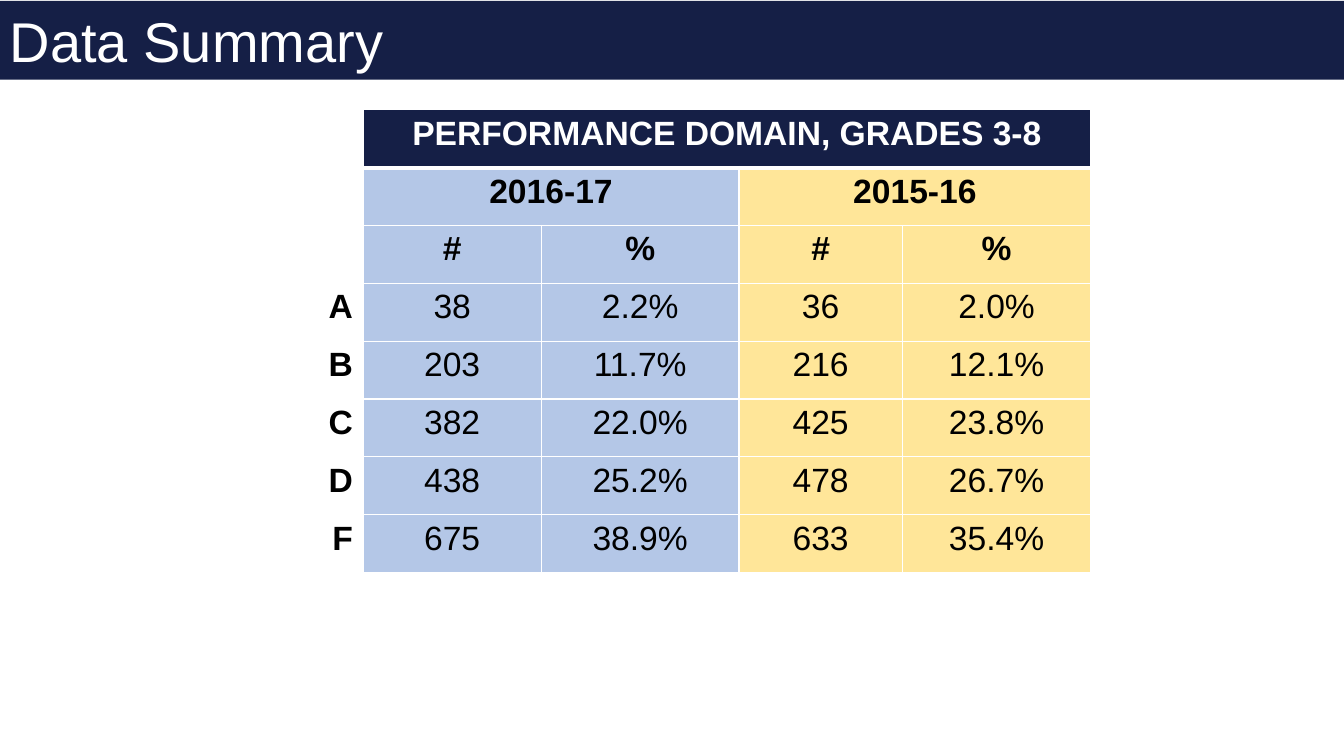
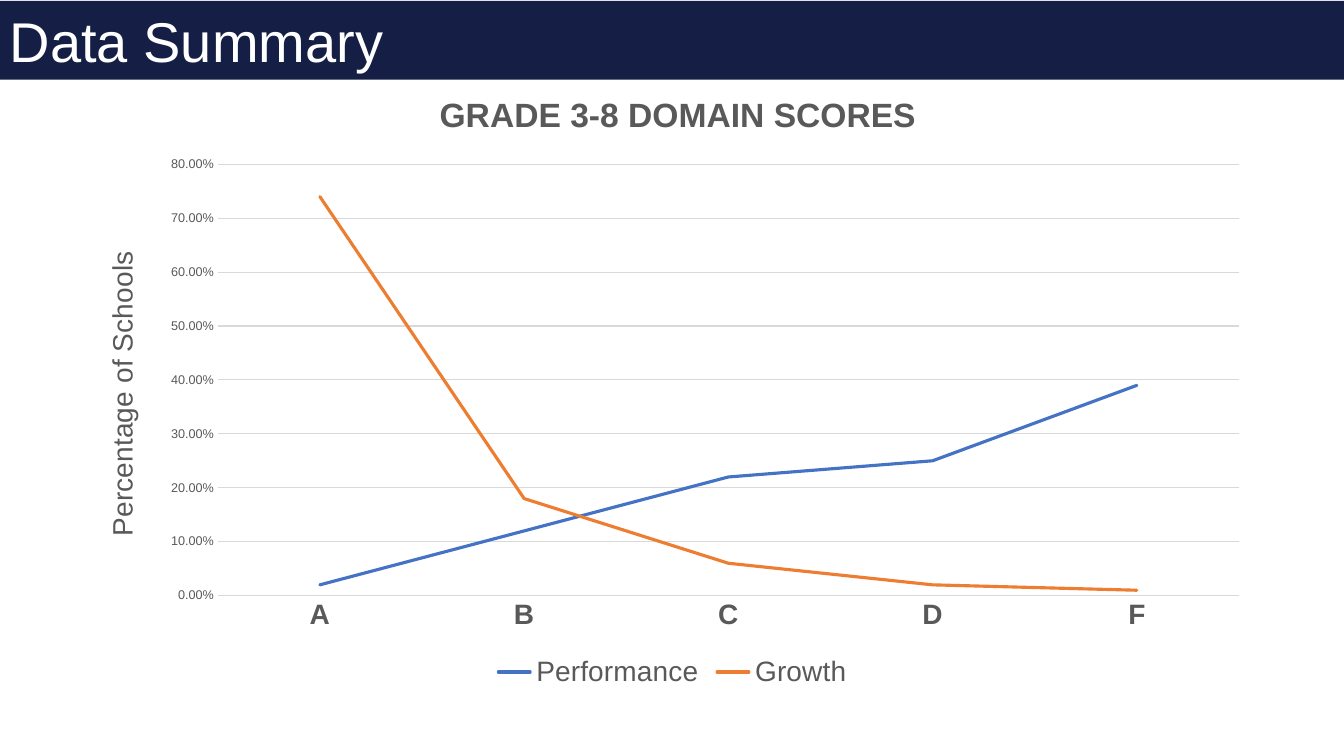
from dataclasses import dataclass

from lxml import etree
from pptx import Presentation
from pptx.chart.data import CategoryChartData
from pptx.dml.color import RGBColor
from pptx.enum.chart import XL_CHART_TYPE, XL_LEGEND_POSITION, XL_TICK_MARK
from pptx.enum.shapes import MSO_SHAPE
from pptx.enum.text import MSO_ANCHOR, PP_ALIGN
from pptx.oxml.ns import qn
from pptx.util import Inches, Pt

LINE = XL_CHART_TYPE.LINE
BOTTOM = XL_LEGEND_POSITION.BOTTOM
NO_TICK = XL_TICK_MARK.NONE
RECT = MSO_SHAPE.RECTANGLE
MIDDLE = MSO_ANCHOR.MIDDLE
LEFT, CENTER, RIGHT = PP_ALIGN.LEFT, PP_ALIGN.CENTER, PP_ALIGN.RIGHT

FONT = "Arial"
NAVY, WHITE, BLACK = "151F46", "FFFFFF", "000000"
PALE_BLUE, PALE_GOLD = "B4C7E7", "FFE699"
GRAY, GRID = "595959", "D9D9D9"
SLIDE_WIDTH = 13.33
CHART_LEFT, CHART_TOP, CHART_WIDTH, CHART_HEIGHT = 0.81, 0.79, 11.72, 6.09


@dataclass(frozen=True)
class Grade:
    letter: str
    count_17: int
    percent_17: float
    count_16: int
    percent_16: float
    growth: float


@dataclass(frozen=True)
class Series:
    name: str
    color: str
    values: list[float]


GRADES = [
    Grade("A", 38, 2.2, 36, 2.0, 0.74),
    Grade("B", 203, 11.7, 216, 12.1, 0.18),
    Grade("C", 382, 22.0, 425, 23.8, 0.06),
    Grade("D", 438, 25.2, 478, 26.7, 0.02),
    Grade("F", 675, 38.9, 633, 35.4, 0.01),
]
SERIES = [
    Series("Performance", "4472C4", [round(g.percent_17 / 100, 2) for g in GRADES]),
    Series("Growth", "ED7D31", [g.growth for g in GRADES]),
]


def rgb(color: str) -> RGBColor:
    return RGBColor.from_string(color)


def style_font(font, size: float, color: str, bold: bool = False) -> None:
    font.name = FONT
    font.size = Pt(size)
    font.bold = bold
    font.color.rgb = rgb(color)


def set_text(tf, text: str, size: float, color: str, align=CENTER, bold: bool = False) -> None:
    tf.text = text
    p = tf.paragraphs[0]
    p.alignment = align
    style_font(p.runs[0].font, size, color, bold)


def set_border(cell, side: str, color: str, width: float) -> None:
    """Put a cell border ahead of the cell's fill."""
    ln = etree.Element(qn(f"a:{side}"), w=str(Pt(width)))
    fill = etree.SubElement(ln, qn("a:solidFill"))
    etree.SubElement(fill, qn("a:srgbClr"), val=color)
    cell._tc.get_or_add_tcPr().insert(0, ln)


def place_in_chart(element, index: int, **inches: float) -> None:
    """Place a chart part at slide positions given in inches."""
    for old in element.findall(qn("c:layout")):
        element.remove(old)
    layout = etree.Element(qn("c:layout"))
    element.insert(index, layout)
    manual = etree.SubElement(layout, qn("c:manualLayout"))
    if "w" in inches:
        etree.SubElement(manual, qn("c:layoutTarget"), val="inner")
    for mode in ("xMode", "yMode"):
        etree.SubElement(manual, qn(f"c:{mode}"), val="edge")
    start = {"x": CHART_LEFT, "y": CHART_TOP}
    for key, value in inches.items():
        extent = CHART_WIDTH if key in "xw" else CHART_HEIGHT
        share = (value - start.get(key, 0)) / extent
        etree.SubElement(manual, qn(f"c:{key}"), val=f"{share:.4f}")


def add_titled_slide(prs, title: str):
    s = prs.slides.add_slide(prs.slide_layouts[6])
    band = s.shapes.add_shape(RECT, 0, Inches(0.01), Inches(SLIDE_WIDTH), Inches(0.78))
    band.shadow.inherit = False
    band.fill.solid()
    band.fill.fore_color.rgb = rgb(NAVY)
    band.line.fill.background()
    tf = band.text_frame
    tf.word_wrap = True
    tf.vertical_anchor = MIDDLE
    set_text(tf, title, 40, WHITE, LEFT)
    return s


def add_grade_table(s) -> None:
    rows = [
        ["", "PERFORMANCE DOMAIN, GRADES 3-8", "", "", ""],
        ["", "2016-17", "", "2015-16", ""],
        ["", "#", "%", "#", "%"],
    ]
    rows += [
        [g.letter, str(g.count_17), f"{g.percent_17:.1f}%", str(g.count_16), f"{g.percent_16:.1f}%"]
        for g in GRADES
    ]
    widths = [1.35, 1.77, 1.96, 1.62, 1.87]
    table = s.shapes.add_table(
        len(rows), len(widths), Inches(2.25), Inches(1.09), Inches(sum(widths)), Inches(4.59)
    ).table
    table.horz_banding = False
    for column, width in zip(table.columns, widths):
        column.width = Inches(width)

    # Heading spans: the whole domain, then one per year
    table.cell(0, 1).merge(table.cell(0, 4))
    table.cell(1, 1).merge(table.cell(1, 2))
    table.cell(1, 3).merge(table.cell(1, 4))

    column_fills = [None, PALE_BLUE, PALE_BLUE, PALE_GOLD, PALE_GOLD]
    for i, row in enumerate(rows):
        for j, text in enumerate(row):
            cell = table.cell(i, j)
            if j == 0:
                cell.fill.background()
            else:
                cell.fill.solid()
                cell.fill.fore_color.rgb = rgb(NAVY if i == 0 else column_fills[j])
            if i == 0:
                set_border(cell, "lnB", WHITE, 3)
            if text:
                set_text(cell.text_frame, text, 24, WHITE if i == 0 else BLACK,
                         RIGHT if j == 0 else CENTER, i < 3 or j == 0)


def add_score_chart(s) -> None:
    data = CategoryChartData(number_format="0.00%")
    data.categories = [g.letter for g in GRADES]
    for series in SERIES:
        data.add_series(series.name, series.values)
    chart = s.shapes.add_chart(
        LINE, Inches(CHART_LEFT), Inches(CHART_TOP),
        Inches(CHART_WIDTH), Inches(CHART_HEIGHT), data,
    ).chart
    style_font(chart.font, 10, BLACK)
    title = chart.chart_title
    set_text(title.text_frame, "GRADE 3-8 DOMAIN SCORES", 24, GRAY, bold=True)
    title.include_in_layout = False
    place_in_chart(title._element, 1, x=4.3, y=0.86)

    # Lines
    plot = chart.plots[0]
    plot.vary_by_categories = False
    for line, series in zip(plot.series, SERIES):
        line.smooth = False
        line.format.line.color.rgb = rgb(series.color)
        line.format.line.width = Pt(2.25)
        line._element.find(f".//{qn('a:ln')}").set("cap", "rnd")
    plot_area = chart._chartSpace.find(f".//{qn('c:plotArea')}")
    place_in_chart(plot_area, 0, x=2.16, y=1.63, w=10.13, h=4.28)

    # Axes
    cat, val = chart.category_axis, chart.value_axis
    for axis in (cat, val):
        axis.major_tick_mark = axis.minor_tick_mark = NO_TICK
    style_font(cat.tick_labels.font, 20, GRAY, True)
    style_font(val.tick_labels.font, 9, GRAY)
    for line in (cat.format.line, val.major_gridlines.format.line):
        line.color.rgb = rgb(GRID)
        line.width = Pt(0.75)
    val.format.line.fill.background()
    val.minimum_scale, val.maximum_scale, val.major_unit = 0, 0.8, 0.1
    val.tick_labels.number_format = "0.00%"
    val.tick_labels.number_format_is_linked = False
    set_text(val.axis_title.text_frame, "Percentage of Schools", 20, GRAY)

    # Legend
    chart.has_legend = True
    chart.legend.position = BOTTOM
    chart.legend.include_in_layout = False
    style_font(chart.legend.font, 20, GRAY)


def main() -> None:
    prs = Presentation()
    prs.slide_width, prs.slide_height = Inches(SLIDE_WIDTH), Inches(7.5)
    for add_content in (add_grade_table, add_score_chart):
        add_content(add_titled_slide(prs, "Data Summary"))
    prs.save("out.pptx")


if __name__ == "__main__":
    main()
